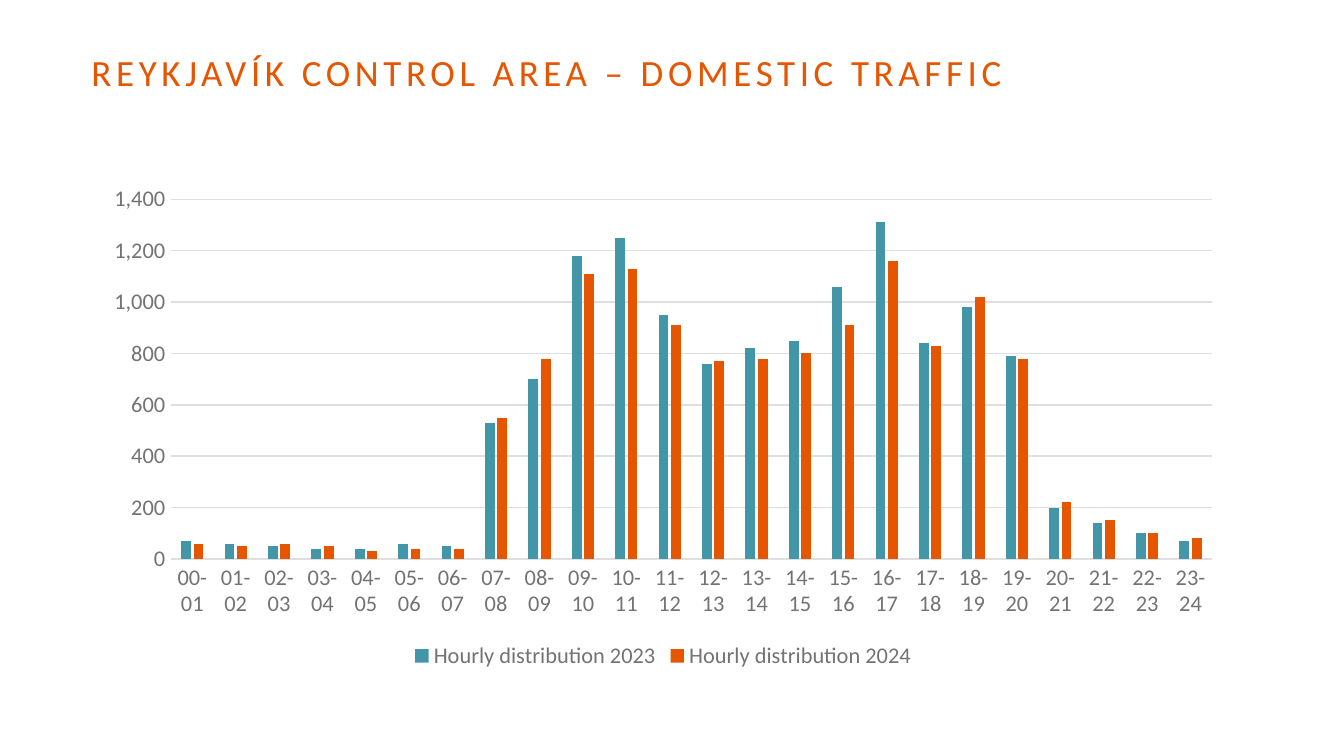
import pptx
import pptx.util
import pptx.chart.data
import pptx.dml.color
import pptx.enum.chart
import pptx.enum.text
from pptx.util import Inches

FONT = "Calibri"
ORANGE, TEAL, GRAY, PALE, DARK = "E65500", "4396A7", "737373", "DFDFDF", "272727"

HOURS = [f"{hour:02}-{hour + 1:02}" for hour in range(24)]
SERIES = [
    ("Hourly distribution 2023", TEAL,
     [70, 60, 50, 40, 40, 60, 50, 530, 700, 1180, 1250, 950,
      760, 820, 850, 1060, 1310, 840, 980, 790, 200, 140, 100, 70]),
    ("Hourly distribution 2024", ORANGE,
     [60, 50, 60, 50, 30, 40, 40, 550, 780, 1110, 1130, 910,
      770, 780, 800, 910, 1160, 830, 1020, 780, 220, 150, 100, 80]),
]


def paint(target, color):
    """Colour a fill, line fill or font."""
    if hasattr(target, "solid"):
        target.solid()
        target = target.fore_color
    else:
        target = target.color
    target.rgb = pptx.dml.color.RGBColor.from_string(color)


def style(font, size, color):
    font.name = FONT
    font.size = pptx.util.Pt(size)
    paint(font, color)


def rule(line, color, width=0.75):
    paint(line.fill, color)
    line.width = pptx.util.Pt(width)


def add_text(slide, text, *, box, size, color, leading, track):
    frame = slide.shapes.add_textbox(*map(Inches, box)).text_frame
    frame.word_wrap = True
    frame.vertical_anchor = pptx.enum.text.MSO_ANCHOR.MIDDLE
    frame.margin_left = frame.margin_right = 0
    frame.margin_top = frame.margin_bottom = 0
    para = frame.paragraphs[0]
    para.line_spacing = pptx.util.Pt(leading)
    run = para.add_run()
    run.text = text
    style(run.font, size, color)
    # Letter spacing is in hundredths of a point
    run._r.get_or_add_rPr().set("spc", str(int(track * 100)))


def add_chart(slide, box):
    data = pptx.chart.data.CategoryChartData(number_format="#,##0")
    data.categories = HOURS
    for name, _, values in SERIES:
        data.add_series(name, values)
    kind = pptx.enum.chart.XL_CHART_TYPE.COLUMN_CLUSTERED
    chart = slide.shapes.add_chart(kind, *map(Inches, box), data).chart
    chart.has_title = False
    style(chart.font, 10, DARK)

    # Columns
    plot = chart.plots[0]
    plot.vary_by_categories = False
    plot.gap_width, plot.overlap = 219, -27
    for series, (_, color, _) in zip(plot.series, SERIES):
        paint(series.format.fill, color)
        series.invert_if_negative = False

    # Axes
    hours, counts = chart.category_axis, chart.value_axis
    for axis in (hours, counts):
        axis.major_tick_mark = pptx.enum.chart.XL_TICK_MARK.NONE
        axis.minor_tick_mark = pptx.enum.chart.XL_TICK_MARK.NONE
        style(axis.tick_labels.font, 12, GRAY)
    rule(hours.format.line, PALE)
    counts.format.line.fill.background()
    counts.minimum_scale, counts.maximum_scale = 0, 1400
    counts.major_unit = 200
    counts.has_major_gridlines = True
    rule(counts.major_gridlines.format.line, PALE)
    counts.tick_labels.number_format = "#,##0"
    counts.tick_labels.number_format_is_linked = False

    # Legend
    chart.has_legend = True
    chart.legend.position = pptx.enum.chart.XL_LEGEND_POSITION.BOTTOM
    chart.legend.include_in_layout = False
    style(chart.legend.font, 12, GRAY)


def main():
    deck = pptx.Presentation()
    # Widescreen, 16:9
    deck.slide_width = Inches(10)
    deck.slide_height = deck.slide_width * 9 // 16
    slide = deck.slides.add_slide(deck.slide_layouts[6])
    paint(slide.background.fill, "FFFFFF")
    add_text(slide, "REYKJAVÍK CONTROL AREA – DOMESTIC TRAFFIC",
             box=(0.68, 0.18, 7.25, 0.67), size=19.8, color=ORANGE,
             leading=26, track=2.5)
    add_chart(slide, (0.68, 1.31, 8.51, 3.71))
    deck.save("out.pptx")


if __name__ == "__main__":
    main()
